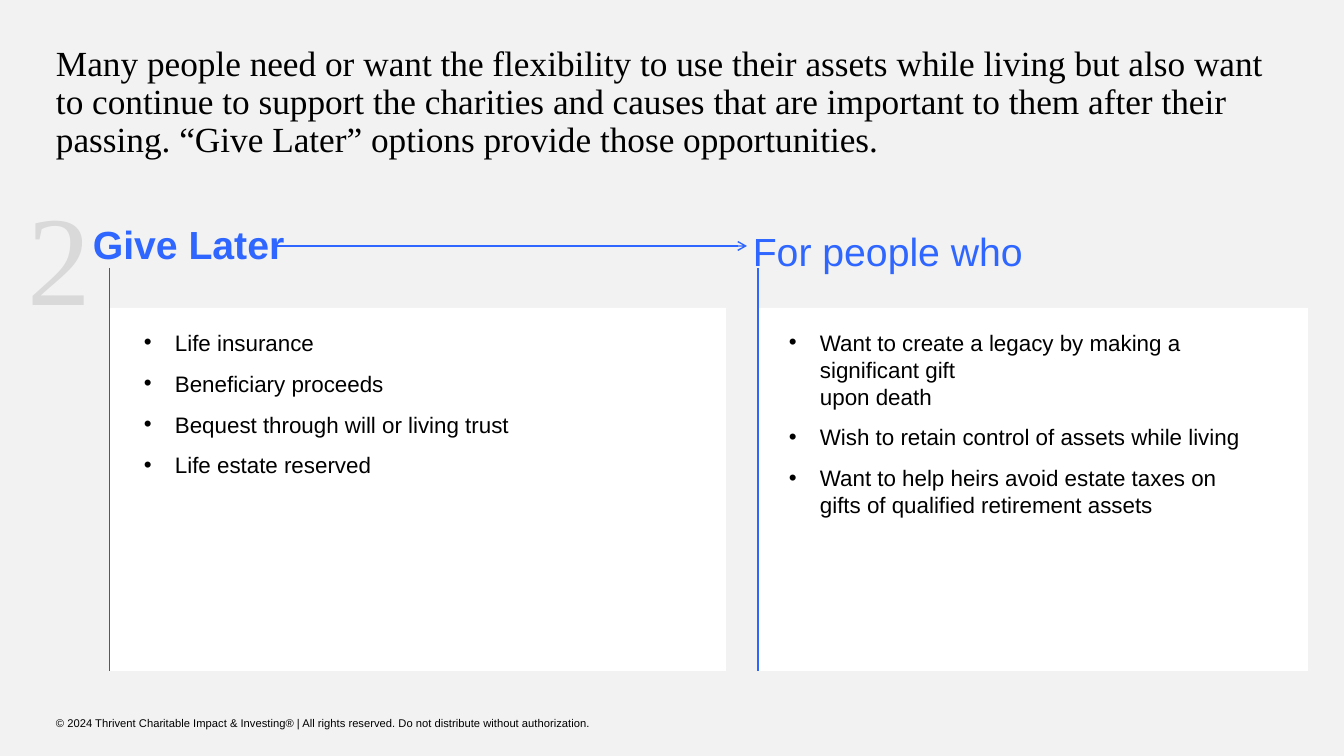
from lxml.etree import SubElement
from pptx import Presentation
from pptx.dml.color import RGBColor
from pptx.enum.shapes import MSO_CONNECTOR, MSO_SHAPE
from pptx.enum.text import MSO_ANCHOR, MSO_AUTO_SIZE, PP_ALIGN
from pptx.oxml.ns import qn
from pptx.util import Emu, Pt

BACKGROUND = RGBColor(0xF2, 0xF2, 0xF2)
WHITE = RGBColor(0xFF, 0xFF, 0xFF)
BLACK = RGBColor(0x00, 0x00, 0x00)
BLUE = RGBColor(0x2E, 0x66, 0xFF)
LIGHT_GRAY = RGBColor(0xD9, 0xD9, 0xD9)
DARK_GRAY = RGBColor(0x59, 0x59, 0x59)
PX = 914400 / 100.8


def px(*lengths):
    return [Emu(round(length * PX)) for length in lengths]


def write(shape, texts, size, color, font="Arial", inset=None, bullets=False):
    frame = shape.text_frame
    frame.word_wrap = True
    frame.auto_size = MSO_AUTO_SIZE.NONE
    frame.vertical_anchor = MSO_ANCHOR.TOP
    if inset is not None:
        frame.margin_left = frame.margin_right = inset
        frame.margin_top = frame.margin_bottom = inset
    for index, text in enumerate(texts):
        paragraph = frame.add_paragraph() if index else frame.paragraphs[0]
        paragraph.text = text
        paragraph.alignment = PP_ALIGN.LEFT
        if bullets:
            hang, = px(31)
            properties = paragraph._p.get_or_add_pPr()
            properties.set("marL", str(hang))
            properties.set("indent", str(-hang))
            SubElement(properties, qn("a:buFont")).set("typeface", "Arial")
            SubElement(properties, qn("a:buChar")).set("char", "•")
            paragraph.space_after = Pt(10)
        paragraph.font.name = font
        paragraph.font.size = Pt(size)
        paragraph.font.color.rgb = color
    return frame


deck = Presentation()
deck.slide_width, deck.slide_height = px(1344, 756)
slide = deck.slides.add_slide(deck.slide_layouts[5])
slide.background.fill.solid()
slide.background.fill.fore_color.rgb = BACKGROUND
shapes = slide.shapes

title = shapes.title
title.left, title.top, title.width, title.height = px(56, 46, 1232, 94)
headline = write(title, [
    "Many people need or want the flexibility to use their assets while living "
    "but also want to continue to support the charities and causes that are "
    "important to them after their passing. “Give Later” options provide those "
    "opportunities."], 25.2, BLACK, "Times New Roman", 0)
headline.paragraphs[0].line_spacing = 0.9

copyright_line = write(shapes.add_textbox(*px(56, 715, 616, 16)), [
    "© 2024 Thrivent Charitable Impact & Investing® | All rights reserved. "
    "Do not distribute without authorization."], 8, BLACK, inset=0)
copyright_line.vertical_anchor = MSO_ANCHOR.MIDDLE

write(shapes.add_textbox(*px(28, 178, 70, 146)), ["2"], 91, LIGHT_GRAY,
      "Times New Roman", 0)

PANEL_TOP, PANEL_BOTTOM, RULE_TOP = 308, 671, 268
columns = [
    (110, 616, 134, 575, [
        "Life insurance",
        "Beneficiary proceeds",
        "Bequest through will or living trust",
        "Life estate reserved"]),
    (758, 550, 779, 475, [
        "Want to create a legacy by making a significant gift\nupon death",
        "Wish to retain control of assets while living",
        "Want to help heirs avoid estate taxes on gifts of qualified "
        "retirement assets"]),
]
for left, width, list_left, list_width, items in columns:
    panel = shapes.add_shape(MSO_SHAPE.RECTANGLE, *px(
        left, PANEL_TOP, width, PANEL_BOTTOM - PANEL_TOP))
    panel.shadow.inherit = False
    panel.fill.solid()
    panel.fill.fore_color.rgb = WHITE
    panel.line.fill.background()
    write(shapes.add_textbox(*px(list_left, 324, list_width, 207)), items, 16,
          BLACK, bullets=True)

give_later = write(shapes.add_textbox(*px(83, 221, 240, 40)), ["Give Later"],
                   28, BLUE).paragraphs[0]
give_later.line_spacing = 0.9
give_later.font.bold = True
write(shapes.add_textbox(*px(743, 222, 446, 57)), ["For people who"], 28, BLUE)

rules = [
    (277, 246, 747, 246, BLUE, 1, True),
    (110, RULE_TOP, 110, PANEL_BOTTOM, DARK_GRAY, 0.75, False),
    (758, RULE_TOP, 758, PANEL_BOTTOM, BLUE, 1, False),
]
for x1, y1, x2, y2, color, weight, has_arrow in rules:
    rule = shapes.add_connector(MSO_CONNECTOR.STRAIGHT, *px(x1, y1, x2, y2))
    rule.line.color.rgb = color
    rule.line.width = Pt(weight)
    if has_arrow:
        SubElement(rule.line._get_or_add_ln(), qn("a:tailEnd")).set("type", "arrow")
    SubElement(rule._element.spPr, qn("a:effectLst"))

deck.save("out.pptx")
